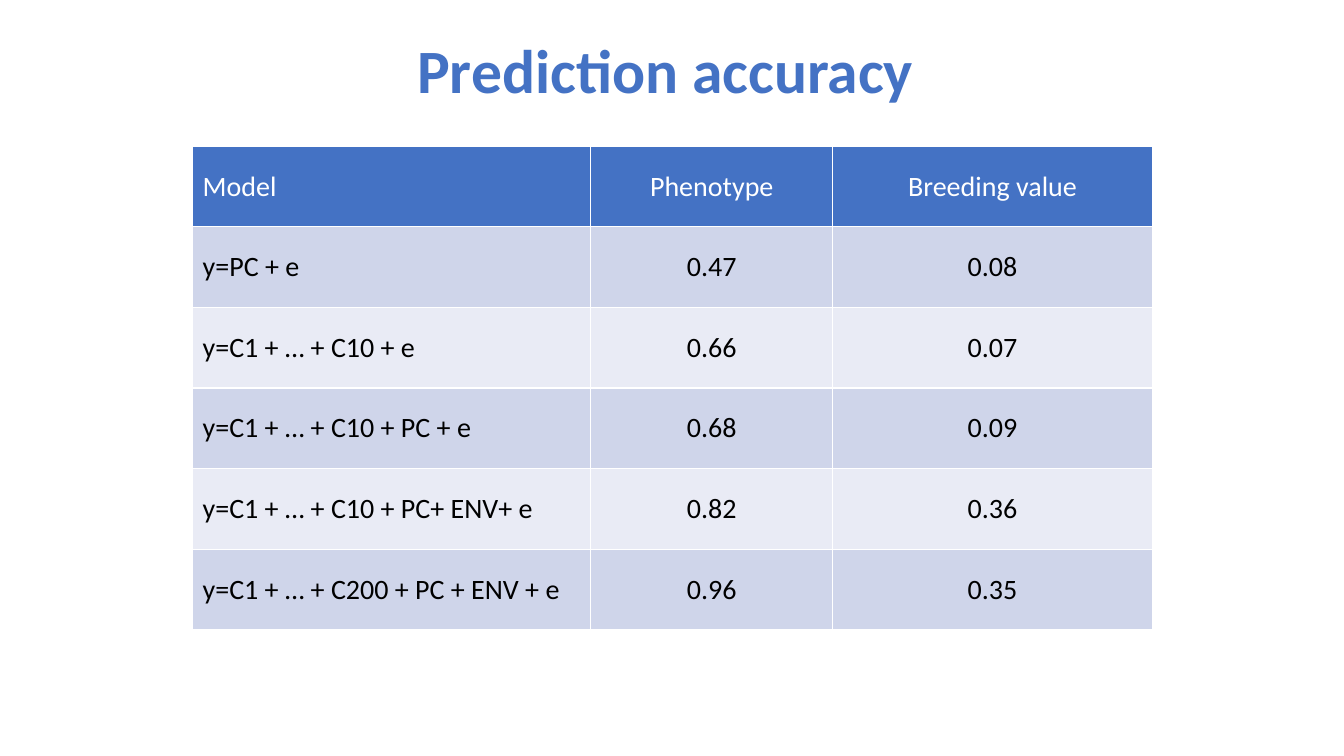
"""Build a slide with a table of prediction accuracy by model."""
from pptx import Presentation
from pptx.dml.color import RGBColor
from pptx.enum.text import MSO_ANCHOR as Anchor, PP_ALIGN as Align
from pptx.util import Inches, Pt

BLUE = RGBColor(0x44, 0x72, 0xC4)
DARK_BAND = RGBColor(0xCF, 0xD5, 0xEA)
LIGHT_BAND = RGBColor(0xE9, 0xEB, 0xF5)
WHITE = RGBColor(0xFF, 0xFF, 0xFF)
BLACK = RGBColor(0x00, 0x00, 0x00)
FONT = "Calibri"

COLUMN_WIDTHS = [3.95, 2.4, 3.17]
ROW_HEIGHT = 0.8
ACCURACY_ROWS = [
    ("Model", "Phenotype", "Breeding value"),
    ("y=PC + e", "0.47", "0.08"),
    ("y=C1 + … + C10 + e", "0.66", "0.07"),
    ("y=C1 + … + C10 + PC + e", "0.68", "0.09"),
    ("y=C1 + … + C10 + PC+ ENV+ e", "0.82", "0.36"),
    ("y=C1 + … + C200 + PC + ENV + e", "0.96", "0.35"),
]


def write_text(text_frame, text, size, color, bold, alignment):
    """Put one formatted paragraph into a text frame."""
    text_frame.text = text
    paragraph = text_frame.paragraphs[0]
    paragraph.alignment = alignment
    font = paragraph.runs[0].font
    font.name = FONT
    font.size = Pt(size)
    font.bold = bold
    font.color.rgb = color


def add_title(slide, text):
    """Add the centred slide title."""
    title = slide.shapes.add_textbox(Inches(0.92), Inches(0), Inches(11.5), Inches(1.45))
    text_frame = title.text_frame
    text_frame.word_wrap = True
    text_frame.vertical_anchor = Anchor.MIDDLE
    write_text(text_frame, text, 44, BLUE, True, Align.CENTER)
    text_frame.paragraphs[0].line_spacing = 0.9


def format_cell(cell, text, row_index, column_index):
    """Fill a cell and write its text according to its row and column."""
    is_header = row_index == 0
    band = DARK_BAND if row_index % 2 else LIGHT_BAND
    cell.fill.solid()
    cell.fill.fore_color.rgb = BLUE if is_header else band
    cell.vertical_anchor = Anchor.MIDDLE
    alignment = Align.CENTER if column_index else Align.LEFT
    write_text(cell.text_frame, text, 20, WHITE if is_header else BLACK, False, alignment)


def add_accuracy_table(slide, rows):
    """Add the table of models and their accuracies."""
    table = slide.shapes.add_table(
        len(rows), len(COLUMN_WIDTHS), Inches(1.91), Inches(1.45),
        Inches(sum(COLUMN_WIDTHS)), Inches(ROW_HEIGHT * len(rows)),
    ).table
    for column, width in zip(table.columns, COLUMN_WIDTHS):
        column.width = Inches(width)
    for row_index, row in enumerate(rows):
        table.rows[row_index].height = Inches(ROW_HEIGHT)
        for column_index, text in enumerate(row):
            format_cell(table.cell(row_index, column_index), text, row_index, column_index)


def main():
    """Create the presentation and save it."""
    presentation = Presentation()
    presentation.slide_width = Inches(13.33)
    presentation.slide_height = Inches(7.5)
    slide = presentation.slides.add_slide(presentation.slide_layouts[6])
    add_accuracy_table(slide, ACCURACY_ROWS)
    add_title(slide, "Prediction accuracy ")
    presentation.save("out.pptx")


if __name__ == "__main__":
    main()
